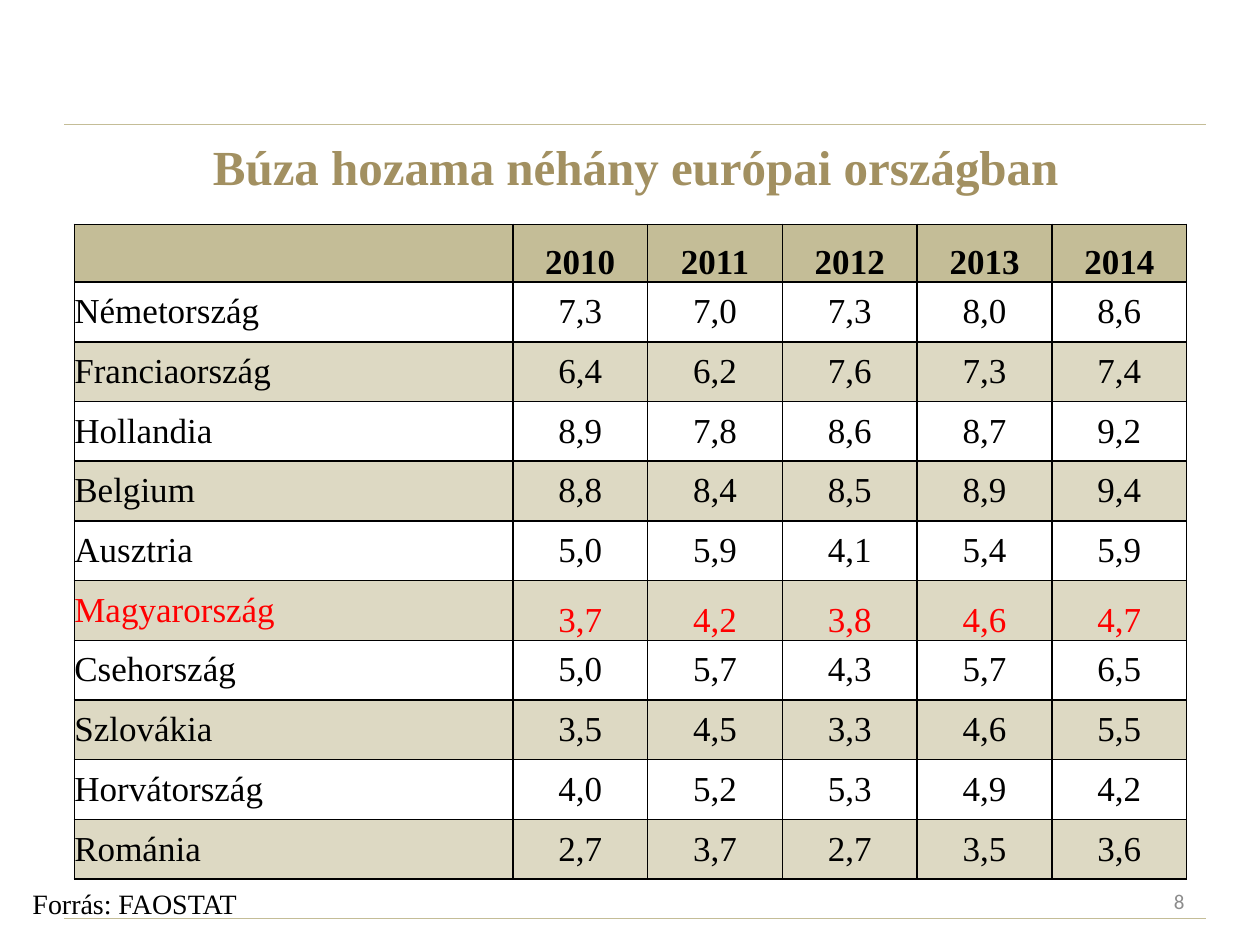
from lxml import etree
from pptx import Presentation
from pptx import util as u
from pptx.dml.color import RGBColor
from pptx.enum import shapes, text
from pptx.oxml.ns import qn

WIDTH, HEIGHT = 10, 7.5
SERIF, SANS = "Times New Roman", "Calibri"
COLORS = {
    "title": "A29061",
    "header": "C4BD97",
    "band": "DDD9C3",
    "plain": "FFFFFF",
    "ink": "000000",
    "highlight": "FF0000",
    "number": "8C8C8C",
}
YEARS = ["2010", "2011", "2012", "2013", "2014"]
YIELDS = [
    ("Németország", "7,3 7,0 7,3 8,0 8,6"),
    ("Franciaország", "6,4 6,2 7,6 7,3 7,4"),
    ("Hollandia", "8,9 7,8 8,6 8,7 9,2"),
    ("Belgium", "8,8 8,4 8,5 8,9 9,4"),
    ("Ausztria", "5,0 5,9 4,1 5,4 5,9"),
    ("Magyarország", "3,7 4,2 3,8 4,6 4,7"),
    ("Csehország", "5,0 5,7 4,3 5,7 6,5"),
    ("Szlovákia", "3,5 4,5 3,3 4,6 5,5"),
    ("Horvátország", "4,0 5,2 5,3 4,9 4,2"),
    ("Románia", "2,7 3,7 2,7 3,5 3,6"),
]
HIGHLIGHTED = "Magyarország"
ALIGN, ANCHOR = text.PP_ALIGN, text.MSO_ANCHOR


def color(name):
    return RGBColor.from_string(COLORS[name])


def write(frame, wording, size, ink, align, font=SERIF, bold=False):
    paragraph = frame.paragraphs[0]
    paragraph.alignment = align
    run = paragraph.add_run()
    run.text = wording
    run.font.size = u.Pt(size)
    run.font.name = font
    run.font.bold = bold
    run.font.color.rgb = color(ink)


def add_rule(slide, y):
    left, right = 0.051 * WIDTH, 0.957 * WIDTH
    rule = slide.shapes.add_connector(
        shapes.MSO_CONNECTOR.STRAIGHT,
        u.Inches(left), u.Inches(y), u.Inches(right), u.Inches(y))
    rule.line.color.rgb = color("header")
    rule.line.width = u.Pt(0.75)
    etree.SubElement(rule._element.spPr, qn("a:effectLst"))


def add_heading(slide, wording):
    heading = slide.shapes.title
    heading.left, heading.top = u.Inches(0.2), u.Inches(0.85)
    heading.width, heading.height = u.Inches(9.69), u.Inches(0.94)
    heading.text_frame.vertical_anchor = ANCHOR.MIDDLE
    write(heading.text_frame, wording, 28, "title", ALIGN.CENTER, bold=True)


def add_label(slide, box, wording, size, ink, align, anchor, font, wrap):
    frame = slide.shapes.add_textbox(*map(u.Inches, box)).text_frame
    frame.word_wrap = wrap
    frame.vertical_anchor = anchor
    write(frame, wording, size, ink, align, font)


def set_borders(cell, bottom):
    properties = cell._tc.get_or_add_tcPr()
    widths = {"a:lnL": 1, "a:lnR": 1, "a:lnT": 1, "a:lnB": bottom}
    for position, (side, points) in enumerate(widths.items()):
        border = etree.Element(qn(side), w=str(u.Pt(points)))
        fill = etree.SubElement(border, qn("a:solidFill"))
        etree.SubElement(fill, qn("a:srgbClr"), val=COLORS["ink"])
        properties.insert(position, border)


def fill_cell(cell, wording, row, column):
    header = row == 0
    banded = row % 2 == 0
    highlighted = row > 0 and YIELDS[row - 1][0] == HIGHLIGHTED
    cell.margin_left = cell.margin_right = cell.margin_top = cell.margin_bottom = 0
    low = header or (highlighted and column > 0)
    cell.vertical_anchor = ANCHOR.BOTTOM if low else ANCHOR.MIDDLE
    cell.fill.solid()
    cell.fill.fore_color.rgb = color("header" if header else "band" if banded else "plain")
    set_borders(cell, 0.5 if column == 0 and banded and row < len(YIELDS) else 1)
    if wording:
        write(cell.text_frame, wording, 20, "highlight" if highlighted else "ink",
              ALIGN.CENTER if column else ALIGN.JUSTIFY, bold=header)


def add_yield_table(slide):
    rows = [["", *YEARS]] + [[country, *values.split()] for country, values in YIELDS]
    widths = [3.48] + [1.07] * len(YEARS)
    heights = [0.46] + [4.74 / len(YIELDS)] * len(YIELDS)
    table = slide.shapes.add_table(
        len(rows), len(widths), u.Inches(0.59), u.Inches(1.78),
        u.Inches(sum(widths)), u.Inches(sum(heights))).table
    for column, width in zip(table.columns, widths):
        column.width = u.Inches(width)
    for row, height in zip(table.rows, heights):
        row.height = u.Inches(height)
    for r, wordings in enumerate(rows):
        for c, wording in enumerate(wordings):
            fill_cell(table.cell(r, c), wording, r, c)


def main():
    deck = Presentation()
    deck.slide_width, deck.slide_height = u.Inches(WIDTH), u.Inches(HEIGHT)
    slide = deck.slides.add_slide(deck.slide_layouts[5])
    add_rule(slide, 7.29)
    add_rule(slide, 0.99)
    add_heading(slide, "Búza hozama néhány európai országban")
    add_label(slide, (0.16, 6.99, 1.84, 0.37), "Forrás: FAOSTAT", 16, "ink",
              ALIGN.LEFT, ANCHOR.TOP, SERIF, False)
    add_label(slide, (7.17, 6.95, 2.33, 0.4), "8", 12, "number",
              ALIGN.RIGHT, ANCHOR.MIDDLE, SANS, True)
    add_yield_table(slide)
    deck.save("out.pptx")


if __name__ == "__main__":
    main()
